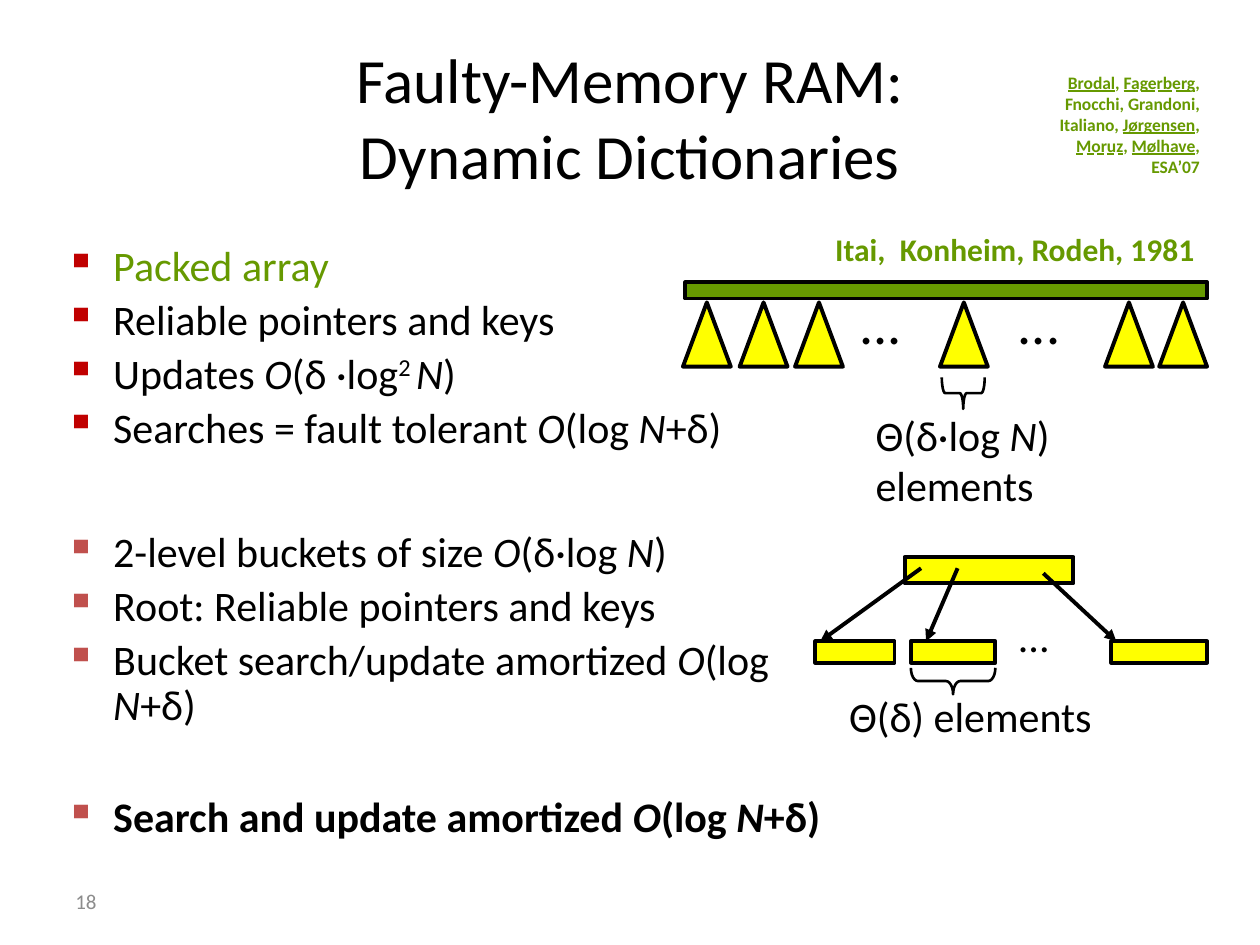
from dataclasses import dataclass
from typing import Optional

from lxml.etree import SubElement
from pptx import Presentation
from pptx.dml.color import RGBColor
from pptx.enum.shapes import MSO_CONNECTOR as Connector, MSO_SHAPE as Preset
from pptx.enum.text import MSO_ANCHOR as Anchor, MSO_UNDERLINE as Underline, PP_ALIGN as Align
from pptx.oxml.ns import qn
from pptx.util import Inches, Pt

BLACK = RGBColor(0x00, 0x00, 0x00)
GRAY = RGBColor(0x8C, 0x8C, 0x8C)
GREEN = RGBColor(0x66, 0x99, 0x00)
YELLOW = RGBColor(0xFF, 0xFF, 0x00)
DARK_RED = RGBColor(0xC0, 0x00, 0x00)
SOFT_RED = RGBColor(0xC0, 0x50, 0x4D)
FONT = "Calibri"


@dataclass(frozen=True)
class Span:
    text: str
    italic: bool = False
    underline: object = None
    raised: bool = False
    color: Optional[RGBColor] = None


@dataclass(frozen=True)
class Style:
    size: int = 24
    color: RGBColor = BLACK
    bold: bool = False
    align: Align = Align.LEFT
    before: int = 0
    bullet: Optional[RGBColor] = None
    anchor: Anchor = Anchor.TOP
    wrap: bool = True


@dataclass(frozen=True)
class Frame:
    left: float
    top: float
    width: float
    height: float

    def lengths(self) -> tuple:
        return tuple(map(Inches, (self.left, self.top, self.width, self.height)))


O = Span("O", italic=True)
N = Span("N", italic=True)
CLOSE = Span(")")
LOG_COST = (O, Span("(log "), N, Span("+δ)"))


def add_span(para, span: Span, style: Style) -> None:
    run = para.add_run()
    run.text = span.text
    font = run.font
    font.name, font.size, font.bold = FONT, Pt(style.size), style.bold
    font.italic, font.underline = span.italic, span.underline
    font.color.rgb = span.color or style.color
    if span.raised:
        run._r.get_or_add_rPr().set("baseline", "30000")


def format_para(para, style: Style) -> None:
    para.alignment = style.align
    if style.bullet is not None:
        para.line_spacing = 0.9
    props = para._p.get_or_add_pPr()
    if style.before:
        spacing = SubElement(props, qn("a:spcBef"))
        SubElement(spacing, qn("a:spcPct"), val=str(style.before * 1000))
    if style.bullet is not None:
        props.set("marL", str(Inches(0.38)))
        props.set("indent", str(-Inches(0.38)))
        color = SubElement(props, qn("a:buClr"))
        SubElement(color, qn("a:srgbClr"), val=str(style.bullet))
        SubElement(props, qn("a:buChar"), char="▪")


def add_text(shapes, frame: Frame, style: Style, *lines: tuple) -> None:
    box = shapes.add_textbox(*frame.lengths())
    text = box.text_frame
    text.word_wrap = style.wrap
    text.vertical_anchor = style.anchor
    for index, line in enumerate(lines):
        para = text.add_paragraph() if index else text.paragraphs[0]
        format_para(para, style)
        for span in line:
            add_span(para, span, style)


def add_block(shapes, preset: Preset, frame: Frame, fill: RGBColor) -> None:
    block = shapes.add_shape(preset, *frame.lengths())
    block.shadow.inherit = False
    block.fill.solid()
    block.fill.fore_color.rgb = fill
    block.line.color.rgb = BLACK
    block.line.width = Pt(2.25)


def add_brace(shapes, frame: Frame, curve: float) -> None:
    brace = shapes.add_shape(Preset.LEFT_BRACE, *frame.lengths())
    brace.rotation = 270
    brace.adjustments[0] = curve
    brace.shadow.inherit = False
    brace.fill.background()
    brace.line.color.rgb = BLACK
    brace.line.width = Pt(1.5)


def add_arrow(shapes, start: tuple, end: tuple) -> None:
    arrow = shapes.add_connector(Connector.STRAIGHT, *map(Inches, start + end))
    arrow.line.color.rgb = BLACK
    arrow.line.width = Pt(2.25)
    SubElement(arrow.line._get_or_add_ln(), qn("a:tailEnd"), type="triangle")
    SubElement(arrow._element.spPr, qn("a:effectLst"))


def add_title(page) -> None:
    title = page.shapes.title
    title.left, title.top, title.width, title.height = Frame(0.5, 0.3, 9, 1.25).lengths()
    title.text_frame.vertical_anchor = Anchor.MIDDLE
    para = title.text_frame.paragraphs[0]
    para.alignment = Align.CENTER
    style = Style(size=36)
    add_span(para, Span("Faulty-Memory RAM:"), style)
    para.add_line_break()
    add_span(para, Span("Dynamic Dictionaries"), style)


def add_bullets(shapes) -> None:
    add_text(shapes, Frame(0.42, 1.9, 6.05, 1.81), Style(before=20, bullet=DARK_RED),
             (Span("Packed array", color=GREEN),),
             (Span("Reliable pointers and keys"),),
             (Span("Updates "), O, Span("(δ ·log"), Span("2 ", raised=True), N, CLOSE),
             (Span("Searches = fault tolerant "), *LOG_COST))
    add_text(shapes, Frame(0.42, 4.17, 6.05, 1.45), Style(before=20, bullet=SOFT_RED),
             (Span("2-level buckets of size "), O, Span("(δ·log "), N, CLOSE),
             (Span("Root: Reliable pointers and keys"),),
             (Span("Bucket search/update amortized "), *LOG_COST))
    add_text(shapes, Frame(0.42, 6.27, 7.52, 0.67),
             Style(bold=True, before=20, bullet=SOFT_RED),
             (Span("Search and update amortized "), *LOG_COST))


def add_packed_array(shapes) -> None:
    add_block(shapes, Preset.RECTANGLE, Frame(5.44, 2.24, 4.14, 0.13), GREEN)
    for left in (5.42, 5.87, 6.31, 7.46, 8.77, 9.2):
        add_block(shapes, Preset.ISOSCELES_TRIANGLE, Frame(left, 2.4, 0.38, 0.51), YELLOW)
    for left in (6.72, 7.98):
        add_text(shapes, Frame(left, 2.24, 0.7, 0.63), Style(size=32, before=50), (Span("..."),))
    add_brace(shapes, Frame(7.52, 2.95, 0.25, 0.34), 0.11)
    add_text(shapes, Frame(6.85, 3.2, 1.72, 0.91), Style(),
             (Span("Θ(δ·log "), N, CLOSE), (Span("elements"),))
    add_text(shapes, Frame(6.5, 1.78, 3.08, 0.4),
             Style(size=18, color=GREEN, bold=True, align=Align.RIGHT, wrap=False),
             (Span("Itai,  Konheim, Rodeh, 1981"),))


def add_bucket(shapes) -> None:
    add_block(shapes, Preset.RECTANGLE, Frame(7.18, 4.42, 1.34, 0.21), YELLOW)
    for left, width in ((6.47, 0.63), (7.23, 0.67), (8.82, 0.76)):
        add_block(shapes, Preset.RECTANGLE, Frame(left, 5.09, width, 0.17), YELLOW)
    for start, end_x in (((7.31, 4.51), 6.51), ((7.6, 4.51), 7.35), ((8.28, 4.55), 8.86)):
        add_arrow(shapes, start, (end_x, 5.09))
    add_text(shapes, Frame(7.98, 4.8, 0.71, 0.5), Style(before=50), (Span("..."),))
    add_brace(shapes, Frame(7.46, 5.07, 0.21, 0.67), 0.27)
    add_text(shapes, Frame(6.64, 5.43, 2.27, 0.5), Style(), (Span("Θ(δ) elements"),))


def add_authors(shapes) -> None:
    add_text(shapes, Frame(8.11, 0.52, 1.51, 0.93),
             Style(size=10, color=GREEN, bold=True, align=Align.RIGHT, before=20),
             (Span("Brodal", underline=True), Span(", "),
              Span("Fagerberg", underline=Underline.DASH_LONG_HEAVY_LINE),
              Span(", Fnocchi, Grandoni, Italiano, "),
              Span("Jørgensen", underline=True), Span(", "),
              Span("Moruz", underline=Underline.DASH_LINE), Span(", "),
              Span("Mølhave", underline=True), Span(", ESA’07")))


def main() -> None:
    deck = Presentation()
    deck.slide_width, deck.slide_height = Inches(10), Inches(7.5)
    page = deck.slides.add_slide(deck.slide_layouts[5])
    add_title(page)
    add_text(page.shapes, Frame(0.5, 6.95, 2.33, 0.4),
             Style(size=12, color=GRAY, anchor=Anchor.MIDDLE), (Span("18"),))
    add_bullets(page.shapes)
    add_packed_array(page.shapes.add_group_shape().shapes)
    add_bucket(page.shapes.add_group_shape().shapes)
    add_authors(page.shapes)
    deck.save("out.pptx")


if __name__ == "__main__":
    main()
